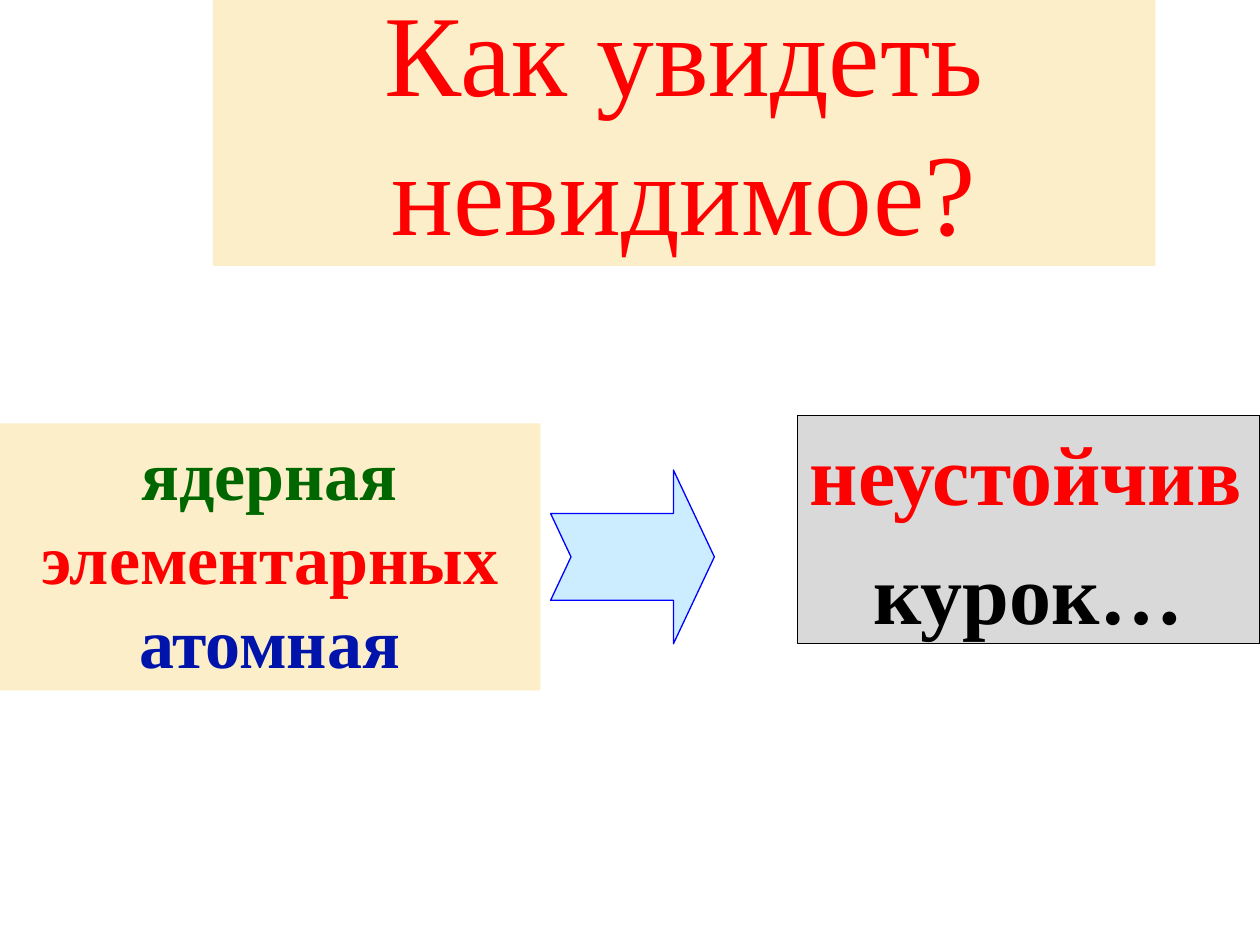
from pptx import Presentation
from pptx.dml.color import RGBColor
from pptx.enum.shapes import MSO_SHAPE
from pptx.enum.text import MSO_ANCHOR, PP_ALIGN
from pptx.util import Inches, Pt

RECT, ARROW = MSO_SHAPE.RECTANGLE, MSO_SHAPE.NOTCHED_RIGHT_ARROW
TOP, MIDDLE = MSO_ANCHOR.TOP, MSO_ANCHOR.MIDDLE
LEFT, CENTER = PP_ALIGN.LEFT, PP_ALIGN.CENTER
FONT = "Times New Roman"
CREAM, RED, BLACK = "FBEEC9", "FF0000", "000000"


def color(code):
    return RGBColor.from_string(code)


def add_panel(slide, kind, box, fill, line=None):
    shape = slide.shapes.add_shape(kind, *map(Inches, box))
    shape.shadow.inherit = False
    shape.fill.solid()
    shape.fill.fore_color.rgb = color(fill)
    if line:
        shape.line.color.rgb = color(line)
        shape.line.width = Pt(0.75)
    else:
        shape.line.fill.background()
    return shape


def write(shape, lines, size, bold=True, anchor=MIDDLE, after=0):
    """Fill the shape with lines of (text, colour, alignment)."""
    frame = shape.text_frame
    frame.word_wrap = True
    frame.vertical_anchor = anchor
    frame.text = "\n".join(text for text, _, _ in lines)
    for para, (_, code, align) in zip(frame.paragraphs, lines):
        para.alignment = align
        para.space_after = Pt(after)
        font = para.runs[0].font
        font.name, font.size, font.bold = FONT, Pt(size), bold
        font.color.rgb = color(code)


def add_title(slide, box):
    panel = add_panel(slide, RECT, box, CREAM)
    write(panel, [("Как увидеть невидимое?", RED, CENTER)], 66, bold=False)


def add_topics(slide, box):
    panel = add_panel(slide, RECT, box, CREAM)
    write(panel, [("ядерная", "006600", CENTER),
                  ("элементарных", RED, CENTER),
                  ("атомная", "0014AC", CENTER)], 40)


def add_arrow(slide, box):
    arrow = add_panel(slide, ARROW, box, "CCECFF", "0000FF")
    arrow.adjustments[0] = 0.5
    arrow.adjustments[1] = 0.25


def add_trigger(slide, box):
    panel = add_panel(slide, RECT, box, "D9D9D9", BLACK)
    write(panel, [("неустойчив", RED, LEFT), ("курок…", BLACK, CENTER)],
          48, anchor=TOP, after=10)


def main():
    deck = Presentation()
    deck.slide_width, deck.slide_height = Inches(10), Inches(7.5)
    slide = deck.slides.add_slide(deck.slide_layouts[6])
    add_topics(slide, (-0.01, 3.36, 4.3, 2.12))
    add_arrow(slide, (4.37, 3.73, 1.3, 1.38))
    add_trigger(slide, (6.33, 3.3, 3.67, 1.81))
    add_title(slide, (1.69, -0.21, 7.48, 2.32))
    deck.save("out.pptx")


if __name__ == "__main__":
    main()
